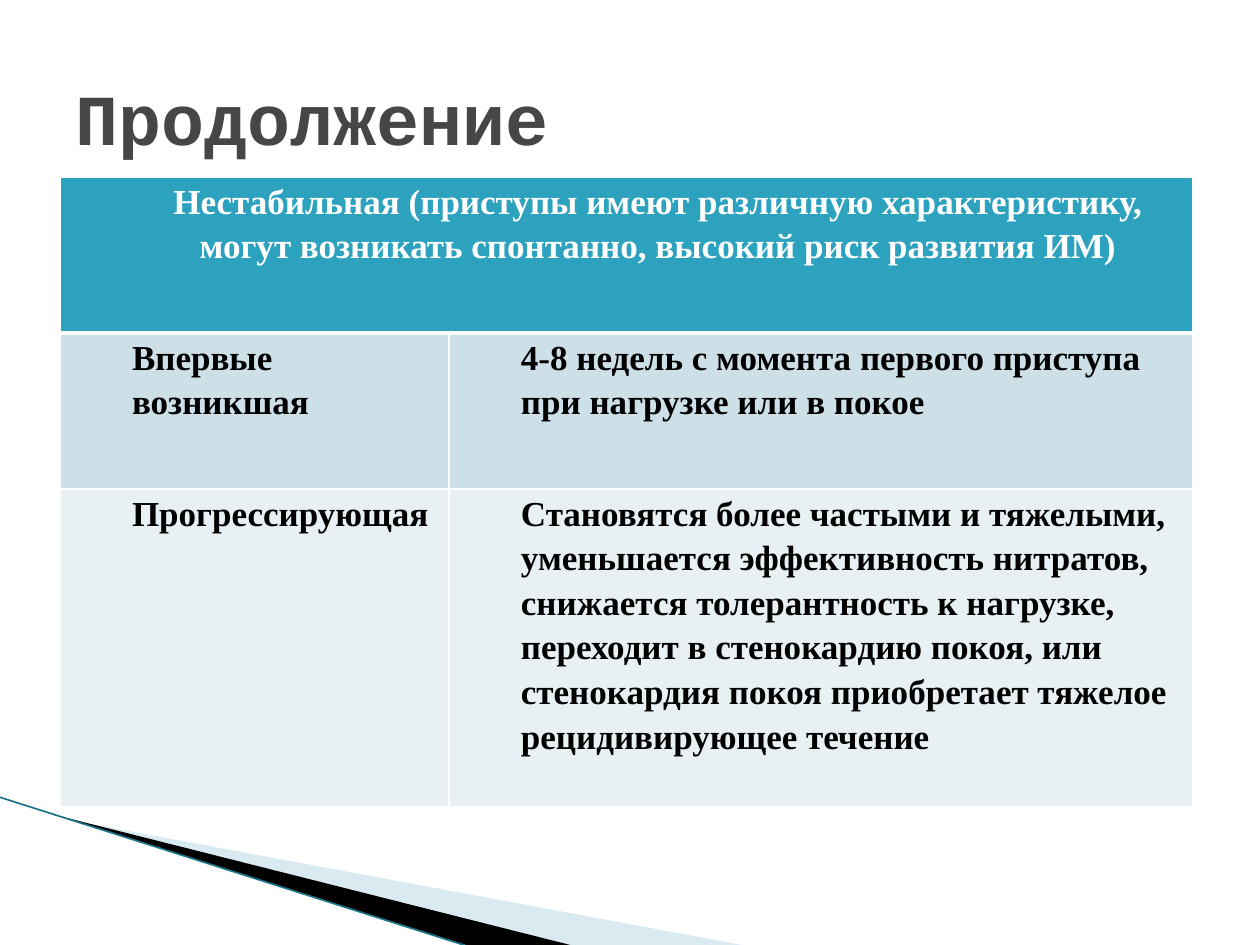
import pptx
import pptx.dml.color
import pptx.enum.shapes
import pptx.enum.text
import pptx.oxml
import pptx.oxml.ns
import pptx.util
from lxml import etree

SCALE = 914400 / 126
COLUMNS = [389, 744]
ROWS = [
    (156, "2DA2BF", "FFFFFF", [
        "Нестабильная (приступы имеют различную характеристику, "
        "могут возникать спонтанно, высокий риск развития ИМ)"]),
    (156, "CDE0E8", "000000", [
        "Впервые возникшая",
        "4-8 недель с момента первого приступа при нагрузке или в покое"]),
    (318, "E8F0F4", "000000", [
        "Прогрессирующая",
        "Становятся более частыми и тяжелыми, уменьшается эффективность нитратов, "
        "снижается толерантность к нагрузке, переходит в стенокардию покоя, или "
        "стенокардия покоя приобретает тяжелое рецидивирующее течение"]),
]


def px(length):
    """Turn px into EMU."""
    return pptx.util.Emu(round(length * SCALE))


def color(value):
    """Turn a hex string into a colour."""
    return pptx.dml.color.RGBColor.from_string(value)


def sub(parent, tag, **attributes):
    """Add a drawing element to a parent."""
    return etree.SubElement(parent, pptx.oxml.ns.qn(tag), attributes)


def style(paragraph, font, size, value):
    """Set bold text in one font, size and colour."""
    for span in paragraph.runs:
        span.font.name = font
        span.font.size = pptx.util.Pt(size)
        span.font.bold = True
        span.font.color.rgb = color(value)


def set_frame(shape, points, frame):
    """Place a freeform in a frame that its outline may overrun."""
    left, top, width, height = frame
    shape.left, shape.top, shape.width, shape.height = map(px, frame)
    for outline in shape._element.iter(pptx.oxml.ns.qn("a:path")):
        outline.set("w", str(width))
        outline.set("h", str(height))
        for corner, (x, y) in zip(outline.iter(pptx.oxml.ns.qn("a:pt")), points):
            corner.set("x", str(x - left))
            corner.set("y", str(y - top))


def add_wedge(slide, points, frame, fill, opacity=100):
    """Draw a filled wedge without an outline."""
    builder = slide.shapes.build_freeform(*points[0], scale=SCALE)
    builder.add_line_segments(points[1:], close=True)
    wedge = builder.convert_to_shape()
    set_frame(wedge, points, frame)
    wedge.shadow.inherit = False
    wedge.line.fill.background()
    wedge.fill.solid()
    wedge.fill.fore_color.rgb = color(fill)
    if opacity < 100:
        tint = wedge.fill._xPr.find(".//" + pptx.oxml.ns.qn("a:srgbClr"))
        sub(tint, "a:alpha", val=str(opacity * 1000))


def add_line(slide, start, end, value, width):
    """Draw a straight line without a shadow."""
    line = slide.shapes.add_connector(
        pptx.enum.shapes.MSO_CONNECTOR.STRAIGHT, *map(px, start + end))
    line.line.color.rgb = color(value)
    line.line.width = pptx.util.Pt(width)
    sub(line._element.spPr, "a:effectLst")


def add_title(slide, text):
    """Add the slide title."""
    box = slide.shapes.add_textbox(px(63), px(38), px(1134), px(158))
    frame = box.text_frame
    frame.word_wrap = True
    frame.vertical_anchor = pptx.enum.text.MSO_ANCHOR.MIDDLE
    frame.text = text
    style(frame.paragraphs[0], "Courier New", 41, "464646")


def set_borders(cell, bottom):
    """Give a cell white borders, with its own bottom width."""
    properties = cell._tc.get_or_add_tcPr()
    for side, width in zip("LRTB", (1, 1, 1, bottom)):
        border = sub(properties, "a:ln" + side, w=str(pptx.util.Pt(width)))
        sub(sub(border, "a:solidFill"), "a:srgbClr", val="FFFFFF")


def fill_cell(cell, text, fill, text_color):
    """Write indented text into a filled cell."""
    cell.margin_left = cell.margin_right = px(9)
    cell.margin_top = cell.margin_bottom = 0
    cell.fill.solid()
    cell.fill.fore_color.rgb = color(fill)
    cell.text_frame.text = text
    paragraph = cell.text_frame.paragraphs[0]
    paragraph._p.get_or_add_pPr().set("marL", str(px(63)))
    paragraph.line_spacing = 1.15
    paragraph.space_after = pptx.util.Pt(10)
    style(paragraph, "Times New Roman", 20, text_color)


def add_table(slide):
    """Add the table under a merged header."""
    heights = [row[0] for row in ROWS]
    table = slide.shapes.add_table(
        len(ROWS), len(COLUMNS), px(60), px(177),
        px(sum(COLUMNS)), px(sum(heights))).table
    for column, width in zip(table.columns, COLUMNS):
        column.width = px(width)
    for index, (height, fill, text_color, texts) in enumerate(ROWS):
        table.rows[index].height = px(height)
        for cell in table.rows[index].cells:
            set_borders(cell, 1 if index else 3)
        for column, text in enumerate(texts):
            fill_cell(table.cell(index, column), text, fill, text_color)
    header = table.cell(0, 0)
    header.merge(table.cell(0, 1))
    header.text_frame.paragraphs[0].alignment = pptx.enum.text.PP_ALIGN.CENTER


def main():
    """Build the slide and save it."""
    deck = pptx.Presentation()
    deck.slide_width, deck.slide_height = px(1260), px(945)
    slide = deck.slides.add_slide(deck.slide_layouts[6])
    add_wedge(slide, [(69, 820), (747, 946), (574, 946), (69, 819)],
              (98, 689, 524, 199), "A0CBDC", 40)
    add_wedge(slide, [(67, 818), (574, 946), (472, 947), (68, 819)],
              (-8, 798, 524, 116), "000000")
    add_line(slide, (-1, 797), (470, 947), "1B7587", 0.95)
    add_table(slide)
    add_title(slide, "Продолжение")
    deck.save("out.pptx")


if __name__ == "__main__":
    main()
